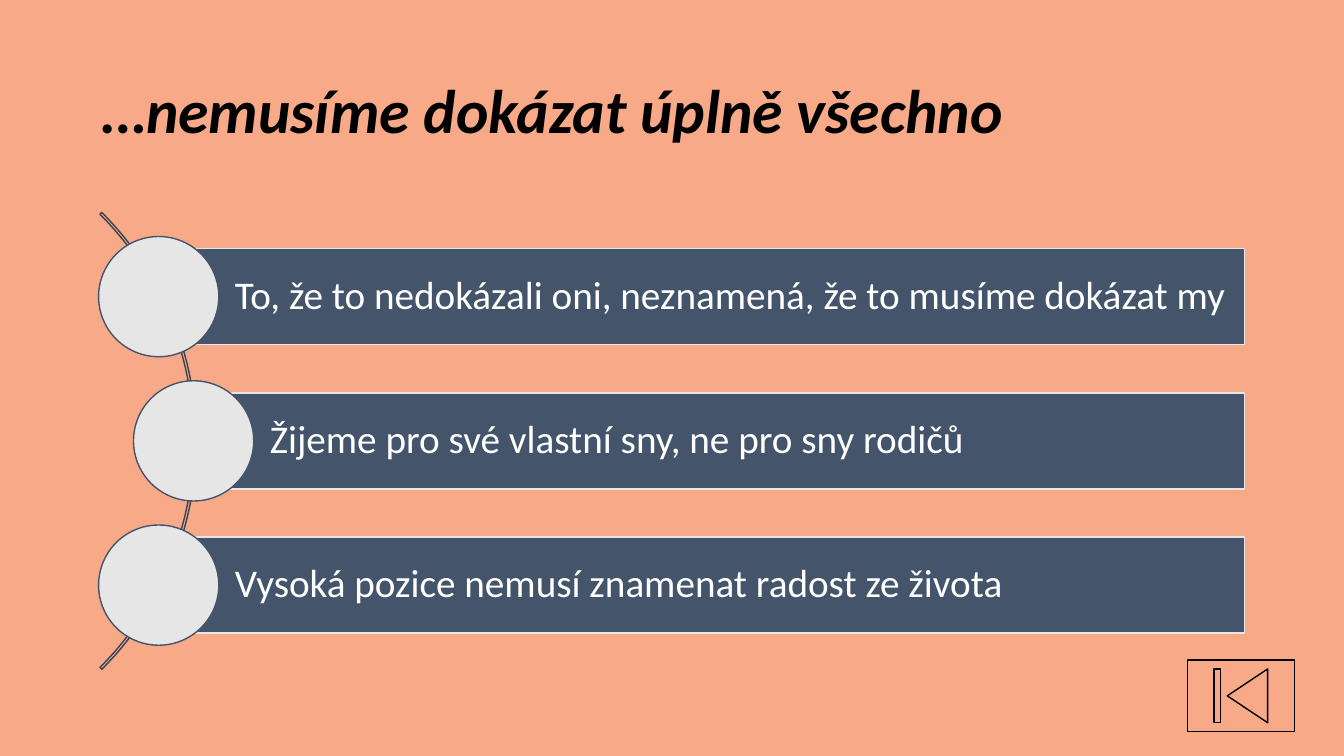
from pptx import Presentation
from pptx.dml.color import RGBColor
from pptx.enum.shapes import MSO_SHAPE
from pptx.enum.text import MSO_ANCHOR, PP_ALIGN
from pptx.util import Cm, Pt

TITLE = "…nemusíme dokázat úplně všechno"
# Left edge of each bar in cm, and its text
BARS = [
    (4.0, "To, že to nedokázali oni, neznamená, že to musíme dokázat my"),
    (4.88, "Žijeme pro své vlastní sny, ne pro sny rodičů"),
    (4.0, "Vysoká pozice nemusí znamenat radost ze života"),
]

PEACH = RGBColor(0xF7, 0xA9, 0x88)
SLATE = RGBColor(0x44, 0x54, 0x6A)
DARK_SLATE = RGBColor(0x36, 0x43, 0x55)
LIGHT_GRAY = RGBColor(0xE7, 0xE6, 0xE6)
WHITE = RGBColor(0xFF, 0xFF, 0xFF)
BLACK = RGBColor(0, 0, 0)

MIDDLE = 11.11
PITCH = 3.635
BAR_RIGHT = 31.37
BAR_HEIGHT = 2.42
CIRCLE = 3.03
ARC = 16.28
ARC_LEFT = -11.33


def add_outlined(page, preset, left, top, width, height, line, fill=None):
    shape = page.shapes.add_shape(preset, Cm(left), Cm(top), Cm(width), Cm(height))
    shape.shadow.inherit = False
    if fill is None:
        shape.fill.background()
    else:
        shape.fill.solid()
        shape.fill.fore_color.rgb = fill
    shape.line.color.rgb = line
    shape.line.width = Pt(1)
    return shape


def write(shape, text, size, color, left_inset, inset, bold=None, italic=None):
    frame = shape.text_frame
    frame.word_wrap = True
    frame.vertical_anchor = MSO_ANCHOR.MIDDLE
    frame.margin_left = Cm(left_inset)
    frame.margin_right = frame.margin_top = frame.margin_bottom = Cm(inset)
    para = frame.paragraphs[0]
    para.text = text
    para.alignment = PP_ALIGN.LEFT
    para.line_spacing = 0.9
    font = para.font
    font.name = "Calibri"
    font.size = Pt(size)
    font.color.rgb = color
    font.bold = bold
    font.italic = italic


deck = Presentation()
deck.slide_width, deck.slide_height = Cm(33.87), Cm(19.05)
page = deck.slides.add_slide(deck.slide_layouts[6])
page.background.fill.solid()
page.background.fill.fore_color.rgb = PEACH

title = page.shapes.add_textbox(Cm(2.33), Cm(1.01), Cm(29.21), Cm(3.68))
write(title, TITLE, 44, BLACK, 0.25, 0.13, bold=True, italic=True)

arc = add_outlined(page, MSO_SHAPE.BLOCK_ARC, ARC_LEFT, MIDDLE - ARC / 2, ARC, ARC, DARK_SLATE)
# Preset angles are in 1/60000 degree, divided by 100000: from 315 to 45 degrees
for index, value in enumerate((189, 27, 0.004)):
    arc.adjustments[index] = value

for row, (left, text) in enumerate(BARS):
    center = MIDDLE + (row - 1) * PITCH
    bar = add_outlined(page, MSO_SHAPE.RECTANGLE, left, center - BAR_HEIGHT / 2,
                       BAR_RIGHT - left, BAR_HEIGHT, LIGHT_GRAY, SLATE)
    write(bar, text, 28, WHITE, 1.92, 0.2)
    add_outlined(page, MSO_SHAPE.OVAL, left - CIRCLE / 2, center - CIRCLE / 2,
                 CIRCLE, CIRCLE, SLATE, LIGHT_GRAY)

add_outlined(page, MSO_SHAPE.ACTION_BUTTON_BEGINNING, 29.92, 16.63, 2.7, 1.81, BLACK)

deck.save("out.pptx")
